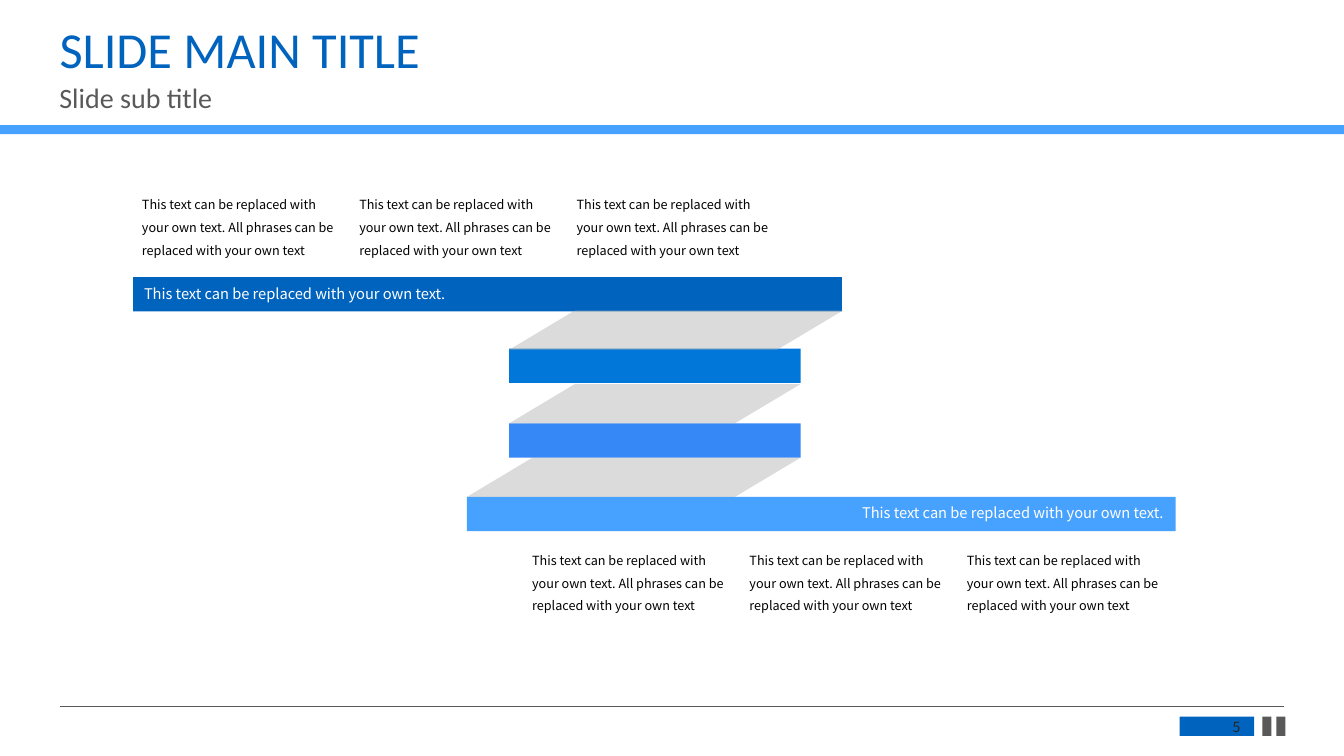
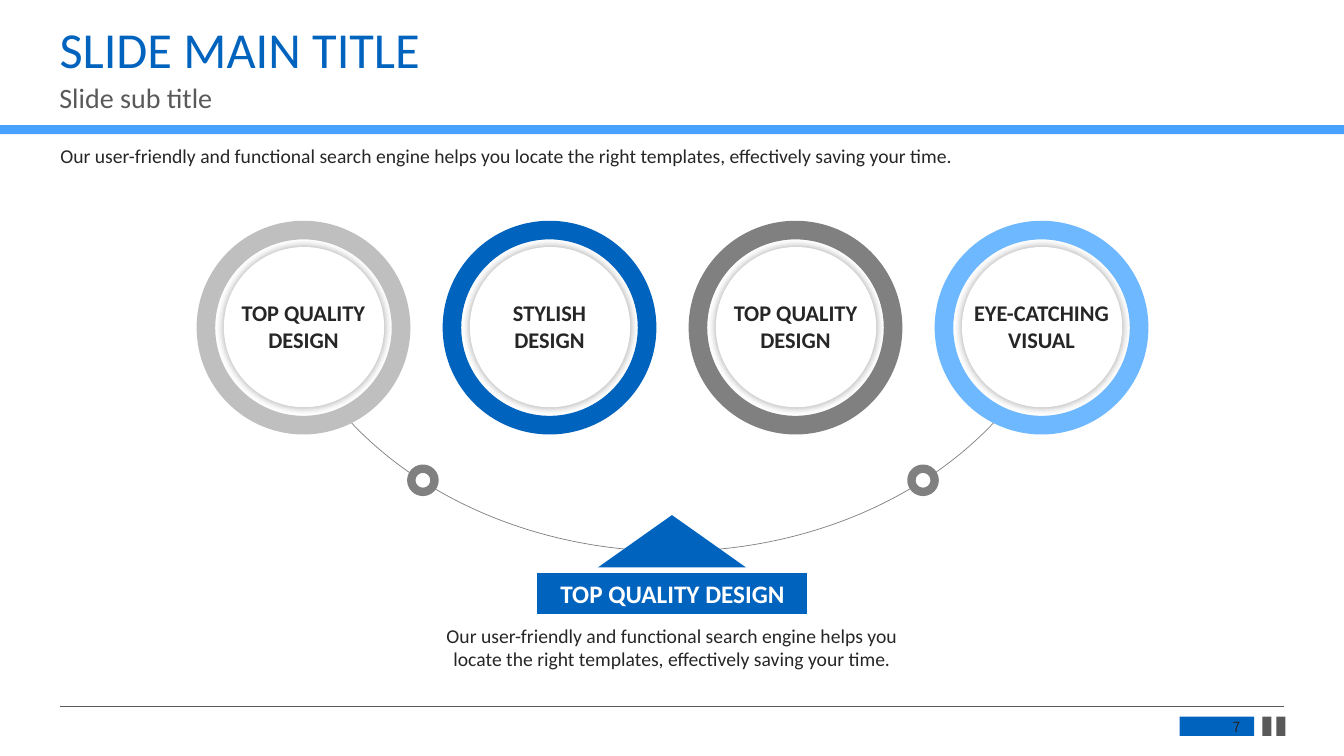
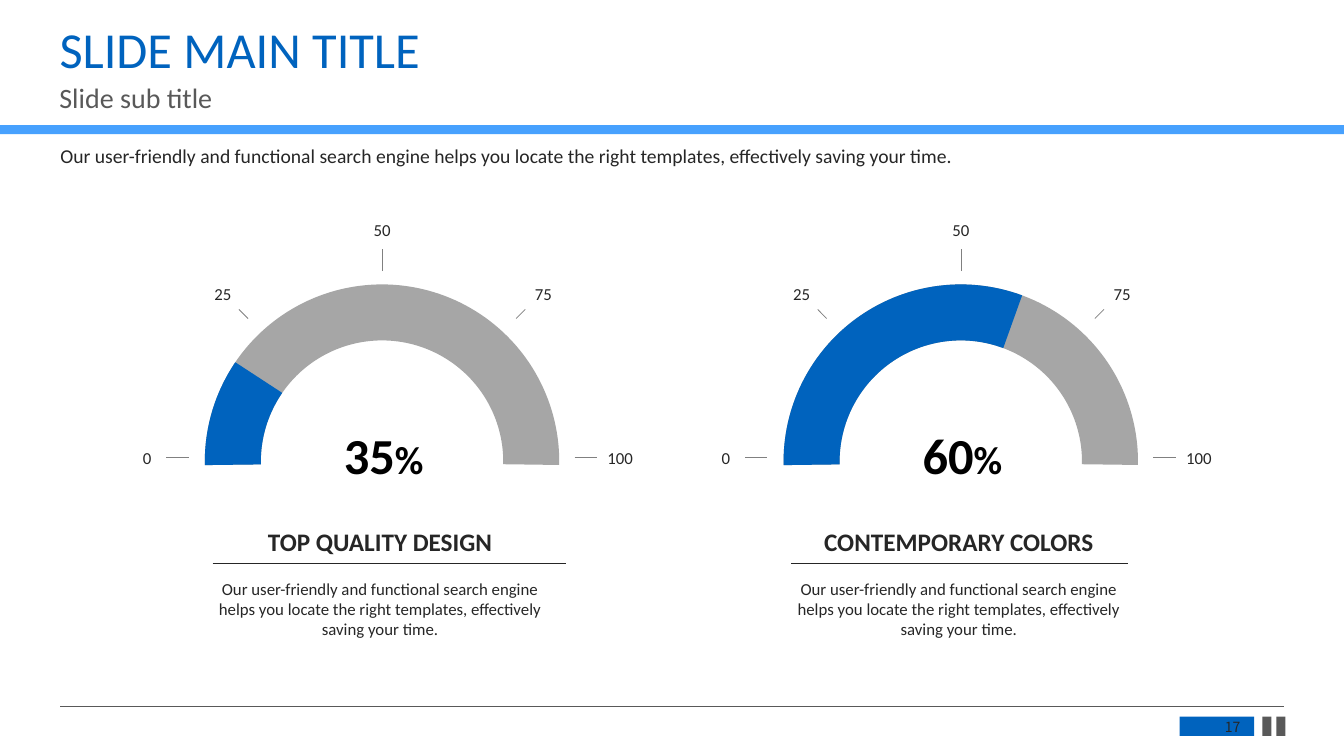
from dataclasses import dataclass
from lxml.etree import SubElement
from pptx import Presentation
from pptx.dml.color import RGBColor
from pptx.enum.shapes import MSO_CONNECTOR, MSO_SHAPE
from pptx.enum.text import MSO_ANCHOR, PP_ALIGN
from pptx.oxml.ns import qn
from pptx.util import Inches, Pt


@dataclass(frozen=True)
class Theme:
    blue: str = "0063BE"
    mid_blue: str = "0178D9"
    soft_blue: str = "3688F7"
    light_blue: str = "47A1FE"
    pale_blue: str = "6EB8FF"
    ink: str = "262626"
    dark_gray: str = "595959"
    gray: str = "808080"
    light_gray: str = "A6A6A6"
    pale_gray: str = "BFBFBF"
    white: str = "FFFFFF"
    black: str = "000000"
    font: str = "Calibri"
    body_font: str = "Noto Sans CJK JP"
    number_font: str = "Noto Sans CJK SC"
    title: float = 36
    percent: float = 28
    subtitle: float = 20
    heading: float = 18
    ring_label: float = 16
    body: float = 14
    small: float = 12
    bar: float = 10.5
    number: float = 10
    caption: float = 9


theme = Theme()


def add_text(slide, text, box, size, color=theme.ink, font=theme.font, bold=False,
             align=PP_ALIGN.LEFT, anchor=MSO_ANCHOR.TOP, spacing=1.0, shape=None):
    if shape is None:
        shape = slide.shapes.add_textbox(0, 0, 0, 0)
    shape.left, shape.top, shape.width, shape.height = map(Inches, box)
    frame = shape.text_frame
    frame.text = text
    frame.word_wrap = True
    frame.vertical_anchor = anchor
    paragraph = frame.paragraphs[0]
    paragraph.alignment = align
    paragraph.line_spacing = spacing
    paragraph.font.size = Pt(size)
    paragraph.font.name = font
    paragraph.font.bold = bold
    paragraph.font.color.rgb = RGBColor.from_string(color)
    for run in paragraph.runs:
        run.font.size = Pt(size)
        run.font.name = font
        run.font.bold = bold
        run.font.color.rgb = RGBColor.from_string(color)
    return shape


def add_figure(slide, kind, box, fill=None, line=None, width=0.5, adjustments=()):
    if kind is MSO_CONNECTOR.STRAIGHT:
        shape = slide.shapes.add_connector(kind, *map(Inches, box))
        SubElement(shape.element.spPr, qn("a:effectLst"))
    else:
        shape = slide.shapes.add_shape(kind, *map(Inches, box))
        shape.shadow.inherit = False
        for index, value in enumerate(adjustments):
            shape.adjustments[index] = value
        if fill:
            shape.fill.solid()
            shape.fill.fore_color.rgb = RGBColor.from_string(fill)
        else:
            shape.fill.background()
    if line:
        shape.line.color.rgb = RGBColor.from_string(line)
        shape.line.width = Pt(width)
    else:
        shape.line.fill.background()
    return shape


presentation = Presentation()
presentation.slide_width = Inches(13.33)
presentation.slide_height = Inches(7.5)
layout = presentation.slide_layouts[5]

slides = []
for number in (5, 7, 17):
    slide = presentation.slides.add_slide(layout)
    slides.append(slide)
    add_text(slide, "SLIDE MAIN TITLE", (0.49, 0.2, 12.18, 0.64), theme.title, theme.blue,
             spacing=0.9, shape=slide.shapes.title)
    add_text(slide, "Slide sub title", (0.49, 0.79, 12.18, 0.45), theme.subtitle,
             theme.dark_gray, spacing=0.9)
    add_text(slide, str(number), (11.74, 7.13, 0.66, 0.17), theme.number,
             font=theme.number_font, align=PP_ALIGN.RIGHT, anchor=MSO_ANCHOR.MIDDLE)

bars_slide, rings_slide, gauges_slide = slides

for kind, box, fill, line in (
    (MSO_SHAPE.RECTANGLE, (0, 1.24, 13.33, 0.09), theme.light_blue, None),
    (MSO_CONNECTOR.STRAIGHT, (0.6, 7.01, 12.73, 7.01), None, theme.dark_gray),
    (MSO_SHAPE.RECTANGLE, (11.7, 7.11, 0.74, 0.19), theme.blue, None),
    (MSO_SHAPE.RECTANGLE, (12.52, 7.11, 0.09, 0.19), theme.dark_gray, None),
    (MSO_SHAPE.RECTANGLE, (12.66, 7.11, 0.09, 0.19), theme.dark_gray, None),
):
    furniture = add_figure(bars_slide, kind, box, fill, line)
    layout.shapes.element.append(furniture.element)

for left, top, width, fill in (
    (1.32, 2.75, 7.03, theme.blue),
    (5.05, 3.46, 2.89, theme.mid_blue),
    (5.05, 4.2, 2.89, theme.soft_blue),
    (4.63, 4.93, 7.03, theme.light_blue),
):
    add_figure(bars_slide, MSO_SHAPE.RECTANGLE, (left, top, width, 0.34), fill)

for left, top, width in ((5.05, 3.08, 3.31), (5.05, 3.81, 2.89), (4.63, 4.54, 3.31)):
    fold = add_figure(bars_slide, MSO_SHAPE.PARALLELOGRAM, (left, top, width, 0.39),
                      theme.light_gray, adjustments=(1.671,))
    color_element = next(fold.element.iter(qn("a:srgbClr")))
    SubElement(color_element, qn("a:alpha"), val="40000")

bar_text = "This text can be replaced with your own text."
for box, align in (
    ((1.33, 2.77, 3.42, 0.29), PP_ALIGN.LEFT),
    ((8.19, 4.95, 3.45, 0.28), PP_ALIGN.RIGHT),
):
    add_text(bars_slide, bar_text, box, theme.bar, theme.white, theme.body_font,
             align=align, anchor=MSO_ANCHOR.MIDDLE)

caption_text = bar_text[:-1] + ". All phrases can be replaced with your own text"
for left, top in ((1.31, 1.83), (5.18, 5.36)):
    for column in range(3):
        add_text(bars_slide, caption_text, (left + column * 2.155, top, 2.15, 0.78),
                 theme.caption, theme.black, theme.body_font, spacing=1.5)

description = ("Our user-friendly and functional search engine helps you locate "
               "the right templates, effectively saving your time.")
for slide in (rings_slide, gauges_slide):
    add_text(slide, description, (0.5, 1.38, 12.24, 0.34), theme.body)

add_figure(rings_slide, MSO_SHAPE.ARC, (2.66, -1.03, 8.02, 6.5), line=theme.gray,
           adjustments=(18.9, 89.23))
for index, (label, color, label_width) in enumerate((
    ("TOP QUALITY DESIGN", theme.pale_gray, 1.7),
    ("STYLISH DESIGN", theme.blue, 1.36),
    ("TOP QUALITY DESIGN", theme.gray, 1.7),
    ("EYE-CATCHING VISUAL", theme.pale_blue, 1.7),
)):
    left = 1.95 + index * 2.44
    add_figure(rings_slide, MSO_SHAPE.DONUT, (left, 2.19, 2.12, 2.12), color,
               adjustments=(0.087,))
    disc = add_figure(rings_slide, MSO_SHAPE.OVAL, (left + 0.27, 2.45, 1.59, 1.59),
                      theme.white)
    effects = disc.element.spPr.find(qn("a:effectLst"))
    shadow = SubElement(effects, qn("a:outerShdw"), blurRad=str(Pt(5)), dist="0",
                        sx="102000", sy="102000", algn="ctr", rotWithShape="0")
    shadow_color = SubElement(shadow, qn("a:srgbClr"), val=theme.black)
    SubElement(shadow_color, qn("a:alpha"), val="25000")
    add_text(rings_slide, label, (left + 1.06 - label_width / 2, 2.92, label_width, 0.64),
             theme.ring_label, bold=True, align=PP_ALIGN.CENTER)

for left in (4.08, 9.04):
    add_figure(rings_slide, MSO_SHAPE.OVAL, (left, 4.65, 0.23, 0.23), theme.white,
               theme.gray, 6)
add_figure(rings_slide, MSO_SHAPE.ISOSCELES_TRIANGLE, (5.93, 5.11, 1.47, 0.52), theme.blue)
add_figure(rings_slide, MSO_SHAPE.RECTANGLE, (5.32, 5.68, 2.69, 0.41), theme.blue,
           theme.white, 0.25)
add_text(rings_slide, "TOP QUALITY DESIGN", (5.43, 5.69, 2.48, 0.41), theme.heading,
         theme.white, bold=True, align=PP_ALIGN.CENTER)
add_text(rings_slide, description, (4.31, 6.14, 4.71, 0.57), theme.body,
         align=PP_ALIGN.CENTER)

ticks = (
    ("0", 1.21, 4.39, (1.65, 4.54, 1.87, 4.54)),
    ("25", 1.96, 2.77, (2.37, 3.07, 2.46, 3.16)),
    ("50", 3.54, 2.13, (3.79, 2.69, 3.79, 2.47)),
    ("75", 5.14, 2.77, (5.21, 3.07, 5.12, 3.16)),
    ("100", 5.9, 4.39, (5.7, 4.54, 5.92, 4.54)),
)
arc_start = 107.27
for shift, value, value_end, heading, rule_end in (
    (0, "35", 128.57, "TOP QUALITY DESIGN", 5.61),
    (5.74, "60", 174.21, "CONTEMPORARY COLORS", 11.19),
):
    for label, left, top, (start_x, start_y, end_x, end_y) in ticks:
        add_figure(gauges_slide, MSO_CONNECTOR.STRAIGHT,
                   (start_x + shift, start_y, end_x + shift, end_y), line=theme.gray)
        add_text(gauges_slide, label, (left + shift, top, 0.5, 0.31), theme.small,
                 align=PP_ALIGN.CENTER)
    for color, arc_end in ((theme.light_gray, 0.69), (theme.blue, value_end)):
        add_figure(gauges_slide, MSO_SHAPE.ARC, (2.31 + shift, 3.1, 2.96, 2.96),
                   line=color, width=40, adjustments=(arc_start, arc_end))
    reading = add_text(gauges_slide, value, (3.27 + shift, 4.14, 1.07, 0.67), theme.title,
                       theme.black, bold=True, align=PP_ALIGN.CENTER,
                       anchor=MSO_ANCHOR.MIDDLE, spacing=1.1)
    frame = reading.text_frame
    frame.margin_left = frame.margin_right = frame.margin_top = frame.margin_bottom = 0
    percent_sign = frame.paragraphs[0].add_run()
    percent_sign.text = "%"
    percent_sign.font.size = Pt(theme.percent)
    percent_sign.font.name = theme.font
    percent_sign.font.bold = True
    percent_sign.font.color.rgb = RGBColor.from_string(theme.black)
    add_text(gauges_slide, heading, (1.97 + shift, 5.17, 3.6, 0.41), theme.heading,
             bold=True, align=PP_ALIGN.CENTER)
    add_figure(gauges_slide, MSO_CONNECTOR.STRAIGHT, (2.11 + shift, 5.59, rule_end, 5.59),
               line=theme.ink)
    add_text(gauges_slide, description, (1.97 + shift, 5.69, 3.6, 0.71), theme.small,
             align=PP_ALIGN.CENTER)

presentation.save("out.pptx")
